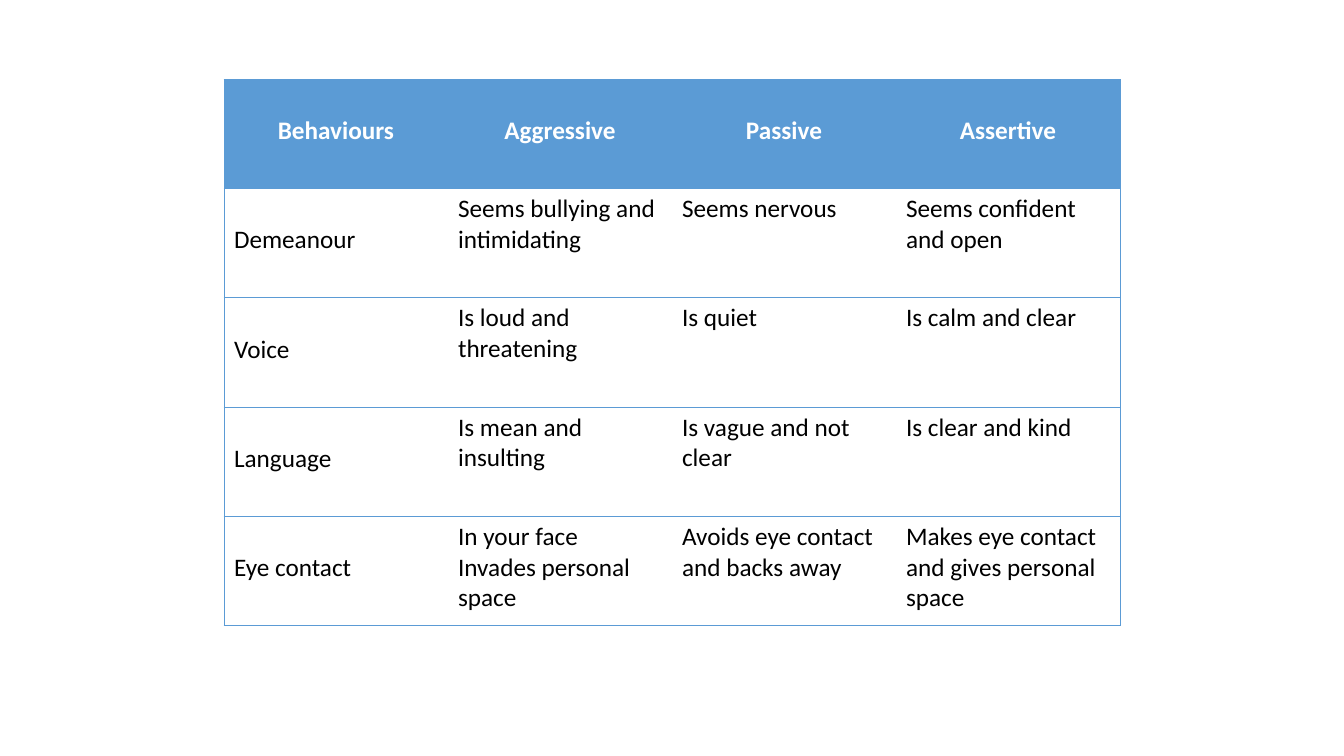
"""Build a slide with a table comparing three kinds of behaviour."""
from lxml import etree
from pptx import Presentation, util as u
from pptx.dml.color import RGBColor
from pptx.enum import text
from pptx.oxml import ns

BLUE = RGBColor(0x5B, 0x9B, 0xD5)
WHITE = RGBColor(0xFF, 0xFF, 0xFF)
BLACK = RGBColor(0, 0, 0)
WIDE, HIGH = u.Inches(13.33), u.Inches(7.5)
COL, ROW = WIDE / 6, HIGH * 0.1445
LEFT, TOP = COL, HIGH * 0.105
PLAIN = "{2D5ABB26-0587-4C30-8999-92F81FD0307C}"
ROWS = [
    ["Behaviours", "Aggressive", "Passive", "Assertive"],
    ["Demeanour", "Seems bullying and intimidating", "Seems nervous",
     "Seems confident and open"],
    ["Voice", "Is loud and threatening", "Is quiet", "Is calm and clear"],
    ["Language", "Is mean and insulting", "Is vague and not clear",
     "Is clear and kind"],
    ["Eye contact", "In your face\nInvades personal space",
     "Avoids eye contact and backs away",
     "Makes eye contact and gives personal space"],
]


def add_edge(cell, side):
    props = cell._tc.get_or_add_tcPr()
    line = etree.SubElement(props, ns.qn("a:ln" + side), w=str(u.Pt(0.5)))
    fill = etree.SubElement(line, ns.qn("a:solidFill"))
    etree.SubElement(fill, ns.qn("a:srgbClr"), val=str(BLUE))


def fill_cell(cell, words, head, label):
    cell.margin_top = u.Inches(0.36 if head or label else 0.05)
    if head:
        cell.fill.solid()
        cell.fill.fore_color.rgb = BLUE
    else:
        cell.fill.background()
    cell.text = words
    for para in cell.text_frame.paragraphs:
        para.alignment = text.PP_ALIGN.CENTER if head else text.PP_ALIGN.LEFT
        font = para.font
        font.name, font.size, font.bold = "Calibri", u.Pt(18), head
        font.color.rgb = WHITE if head else BLACK


def add_grid(slide, rows):
    count, width = len(rows), len(rows[0])
    frame = slide.shapes.add_table(
        count, width, int(LEFT), int(TOP), int(COL * width), int(ROW * count))
    table = frame.table
    table._tbl.tblPr.find(ns.qn("a:tableStyleId")).text = PLAIN
    for i, row in enumerate(rows):
        for j, words in enumerate(row):
            cell = table.cell(i, j)
            sides = ("L" if j == 0 else "") + ("R" if j == width - 1 else "")
            for side in sides + "TB":
                add_edge(cell, side)
            fill_cell(cell, words, i == 0, j == 0)


def main():
    deck = Presentation()
    deck.slide_width, deck.slide_height = WIDE, HIGH
    slide = deck.slides.add_slide(deck.slide_layouts[6])
    add_grid(slide, ROWS)
    deck.save("out.pptx")


if __name__ == "__main__":
    main()
